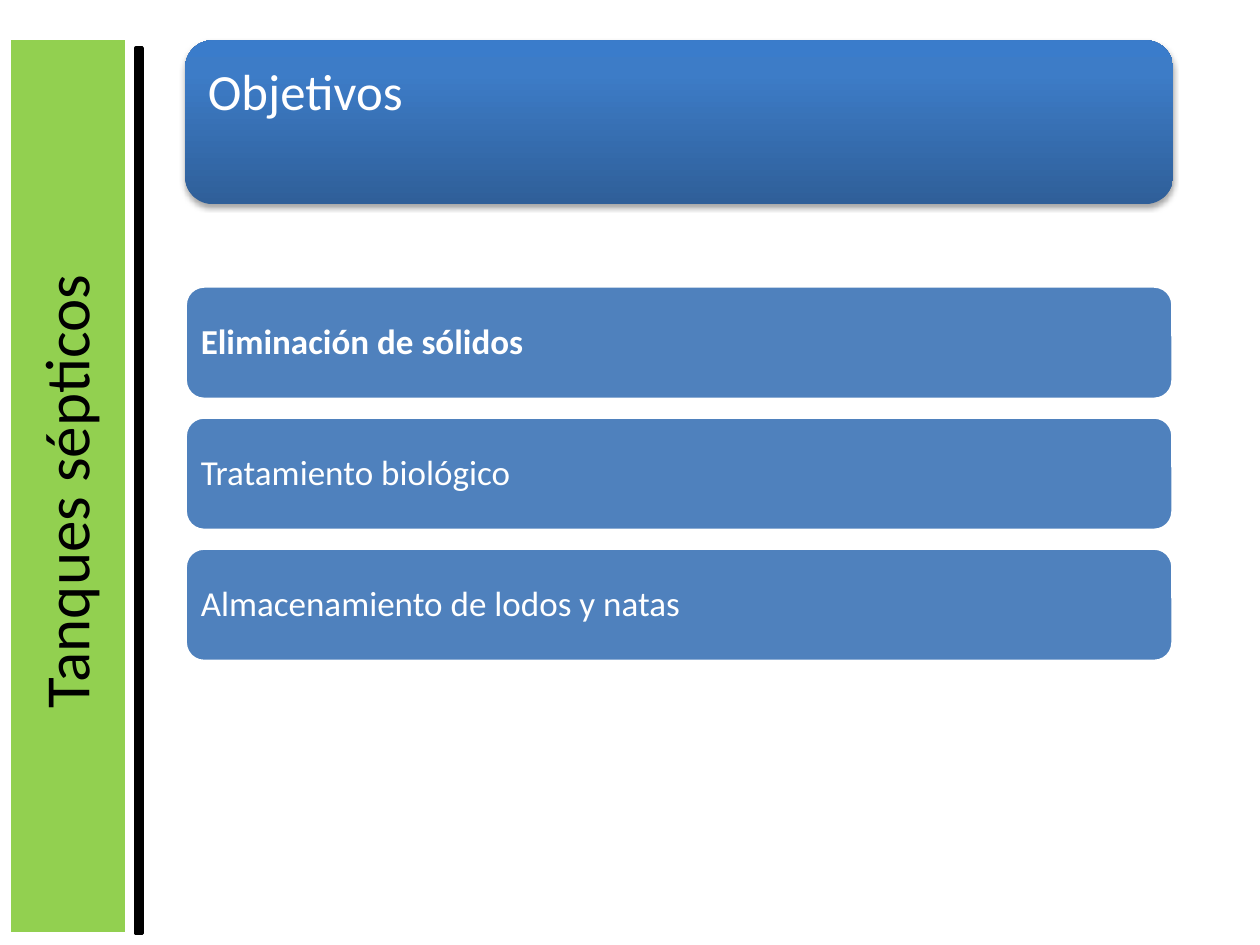
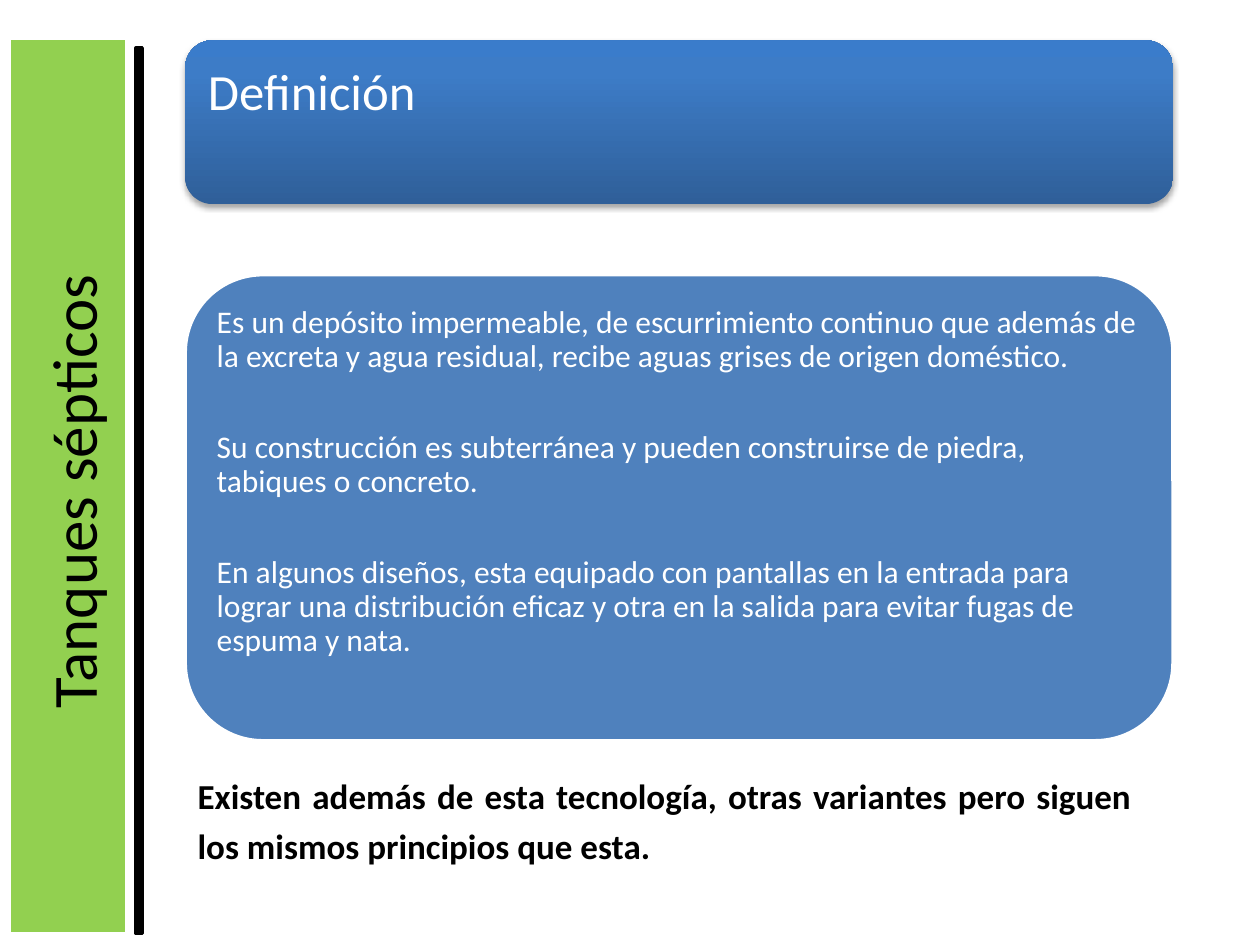
import pptx
import pptx.util
import pptx.dml.color
import pptx.enum.shapes
import pptx.enum.text
import pptx.oxml
import pptx.oxml.ns

Inches, Pt = pptx.util.Inches, pptx.util.Pt
SHAPE = pptx.enum.shapes.MSO_SHAPE
ALIGN = pptx.enum.text.PP_ALIGN
ANCHOR = pptx.enum.text.MSO_ANCHOR

# Content
TOPIC = "Tanques sépticos"
GOALS = {
    "title": "Objetivos",
    "label": (0.16, 1.31),  # left edge and thickness of the rotated label
    "bars": [
        ("Eliminación de sólidos", True),
        ("Tratamiento biológico", False),
        ("Almacenamiento de lodos y natas", False),
    ],
}
DEFINITION = {
    "title": "Definición",
    "label": (0.22, 0.71),
    "body": [
        "Es un depósito impermeable, de escurrimiento continuo que además de "
        "la excreta y agua residual, recibe aguas grises de origen doméstico.",
        "Su construcción es subterránea y pueden construirse de piedra, "
        "tabiques o concreto.",
        "En algunos diseños, esta equipado con pantallas en la entrada para "
        "lograr una distribución eficaz y otra en la salida para evitar fugas "
        "de espuma y nata.",
    ],
    "note": "Existen además de esta tecnología, otras variantes pero siguen "
            "los mismos principios que esta.",
}

# Shared style
FONT = "Calibri"
COLORS = {"green": "92D050", "black": "000000", "white": "FFFFFF", "blue": "4F81BD"}
BAND_STOPS = [(0, "2F5F99"), (80, "3D7CC7"), (100, "3A7CCB")]
LEFT, WIDTH = 1.47, 7.84
LABEL_LENGTH, LABEL_MIDDLE = 6.67, 3.9
BAR_TOP, BAR_HEIGHT, BAR_STEP = 2.27, 0.9, 1.04


def rgb(name):
    return pptx.dml.color.RGBColor.from_string(COLORS[name])


def place(sp, x, y, w, h):
    sp.left, sp.top, sp.width, sp.height = map(Inches, (x, y, w, h))


def add_text(sp, texts, size, color="white", bold=False, align=ALIGN.LEFT,
             anchor=ANCHOR.TOP, spacing=None, after=0, inset=None):
    tf = sp.text_frame
    tf.word_wrap = True
    tf.auto_size = pptx.enum.text.MSO_AUTO_SIZE.NONE
    tf.vertical_anchor = anchor
    if inset is not None:
        tf.margin_left = tf.margin_right = Inches(inset)
        tf.margin_top = tf.margin_bottom = Inches(inset)
    for i, text in enumerate(texts):
        p = tf.paragraphs[0] if i == 0 else tf.add_paragraph()
        p.alignment, p.line_spacing = align, spacing
        p.space_before, p.space_after = Pt(0), Pt(after)
        r = p.add_run()
        r.text = text
        r.font.name, r.font.size, r.font.bold = FONT, Pt(size), bold
        r.font.color.rgb = rgb(color)


def add_box(s, kind, box, fill, line="white"):
    sp = s.shapes.add_shape(kind, *map(Inches, box))
    sp.shadow.inherit = False
    sp.fill.solid()
    sp.fill.fore_color.rgb = rgb(fill)
    sp.line.color.rgb = rgb(line)
    sp.line.width = Pt(2)
    return sp


def add_title_band(s):
    sp = s.shapes.add_shape(SHAPE.ROUNDED_RECTANGLE,
                            *map(Inches, (LEFT, 0.32, WIDTH, 1.3)))
    sp.line.fill.background()
    ns = pptx.oxml.ns.nsdecls("a")
    stops = "".join(f'<a:gs pos="{pos * 1000}"><a:srgbClr val="{c}"/></a:gs>'
                    for pos, c in BAND_STOPS)
    gradient = pptx.oxml.parse_xml(
        f'<a:gradFill {ns} rotWithShape="1"><a:gsLst>{stops}</a:gsLst>'
        '<a:lin ang="16200000" scaled="0"/></a:gradFill>')
    shadow = pptx.oxml.parse_xml(
        f'<a:effectLst {ns}><a:outerShdw blurRad="{Pt(3.1)}" dist="{Pt(1.8)}" '
        'dir="5400000" rotWithShape="0"><a:srgbClr val="000000">'
        '<a:alpha val="35000"/></a:srgbClr></a:outerShdw></a:effectLst>')
    props = sp.element.spPr
    props.find(pptx.oxml.ns.qn("a:prstGeom")).addnext(gradient)
    props.append(shadow)


def bring_to_front(s, sp):
    s.shapes.element.append(sp.element)


def add_slide(prs, layout, content):
    s = prs.slides.add_slide(prs.slide_layouts[layout])
    # Side band with its rotated label
    add_box(s, SHAPE.RECTANGLE, (0.07, 0.3, 0.94, 7.11), "green")
    add_box(s, SHAPE.RECTANGLE, (1.08, 0.38, 0.05, 7.03), "black", "black")
    edge, depth = content["label"]
    label = s.shapes.add_textbox(0, 0, 0, 0)
    place(label, edge + (depth - LABEL_LENGTH) / 2, LABEL_MIDDLE - depth / 2,
          LABEL_LENGTH, depth)
    label.rotation = 270
    add_text(label, [TOPIC], 36, color="black", align=ALIGN.CENTER)
    # Title on its band
    add_title_band(s)
    title = s.shapes.title
    place(title, 1.53, 0.38, 7.71, 1.17)
    add_text(title, [content["title"]], 29, spacing=0.9, inset=0.12)
    title.text_frame.margin_top = Inches(0.15)
    bring_to_front(s, title)
    return s


def build_goals(prs):
    s = add_slide(prs, 5, GOALS)
    for i, (text, bold) in enumerate(GOALS["bars"]):
        box = (LEFT, BAR_TOP + i * BAR_STEP, WIDTH, BAR_HEIGHT)
        bar = add_box(s, SHAPE.ROUNDED_RECTANGLE, box, "blue")
        add_text(bar, [text], 20, bold=bold, anchor=ANCHOR.MIDDLE,
                 spacing=0.9, inset=0.08)


def build_definition(prs):
    s = add_slide(prs, 1, DEFINITION)
    # Panel with the body text
    add_box(s, SHAPE.ROUNDED_RECTANGLE, (LEFT, 2.18, WIDTH, 3.7), "blue")
    body = s.placeholders[1]
    place(body, 1.65, 2.36, 7.48, 3.34)
    add_text(body, DEFINITION["body"], 18, spacing=0.9, after=32.5, inset=0.07)
    for p in body.text_frame.paragraphs:
        props = p._p.get_or_add_pPr()
        props.set("marL", "0")
        props.set("indent", "0")
        props.append(pptx.oxml.parse_xml(
            f'<a:buNone {pptx.oxml.ns.nsdecls("a")}/>'))
    bring_to_front(s, body)
    # Closing note
    note = s.shapes.add_textbox(*map(Inches, (LEFT, 6.03, 7.61, 0.91)))
    add_text(note, [DEFINITION["note"]], 20, color="black", bold=True,
             align=ALIGN.JUSTIFY, spacing=1.2)


def main():
    prs = pptx.Presentation()
    prs.slide_width, prs.slide_height = Inches(10), Inches(7.5)
    build_goals(prs)
    build_definition(prs)
    prs.save("out.pptx")


if __name__ == "__main__":
    main()
